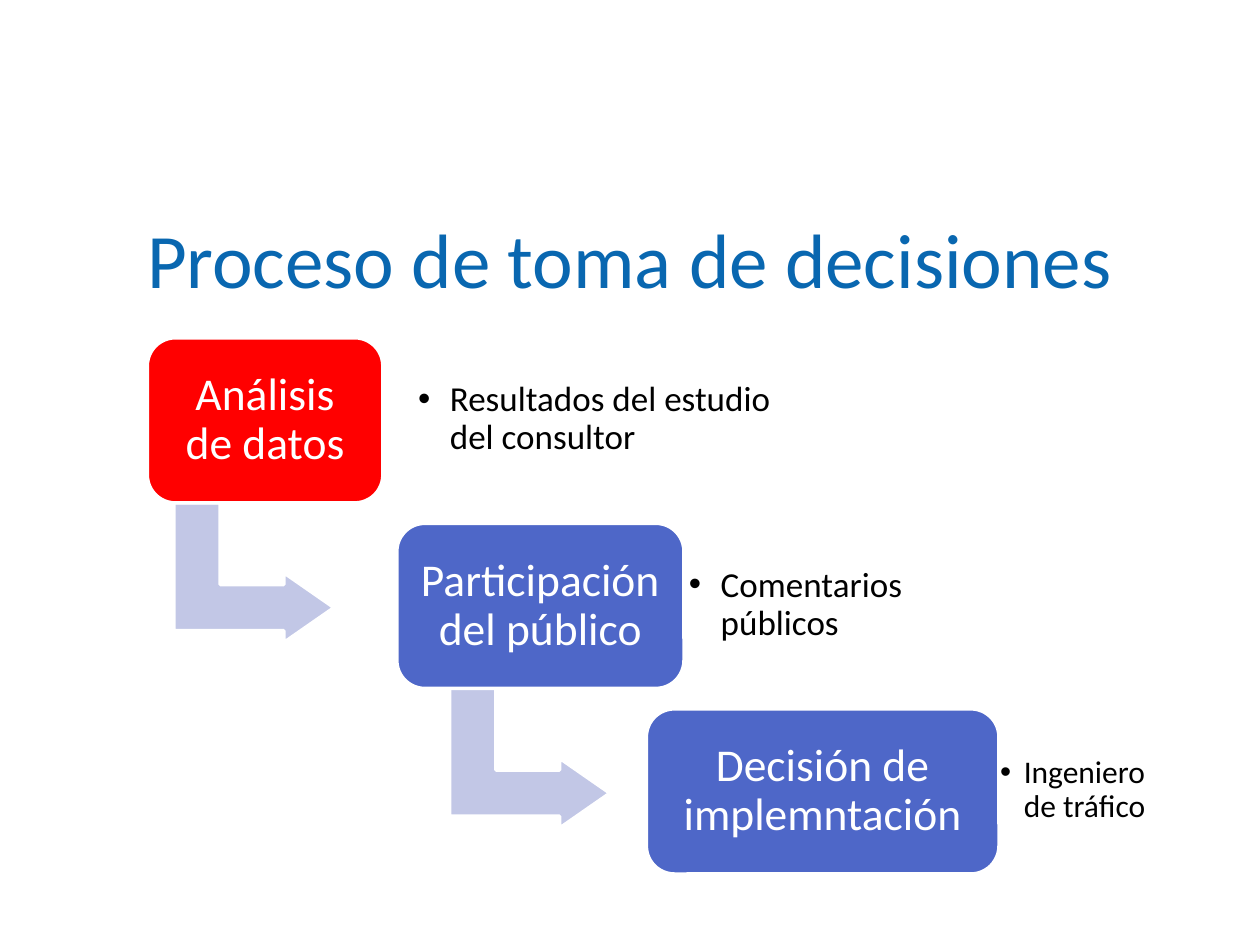
from lxml import etree
from pptx import Presentation
from pptx.dml.color import RGBColor
from pptx.enum import shapes, text
from pptx.oxml.ns import qn
from pptx.util import Cm, Pt

FONT = "Calibri"
COLORS = {
    "title": "0967B0",
    "current": "FF0000",
    "step": "4E67C8",
    "arrow": "C2C7E6",
    "white": "FFFFFF",
    "black": "000000",
}

# Staircase of steps, in cm
FIRST_LEFT, FIRST_TOP = 2.97, 6.81
STEP_RIGHT, STEP_DOWN = 5.03, 3.74
BOX_HEIGHT = 3.33
INSET = 0.28

# label, box colour, box width, note, note left, note width, size, indent, arrow left
STEPS = [
    ("Análisis de datos", "current", 4.75,
     "Resultados del estudio del consultor", 8.15, 8.0, 20, 0.64, 3.71),
    ("Participación del público", "step", 5.79,
     "Comentarios públicos", 13.61, 6.17, 20, 0.64, 9.27),
    ("Decisión de implemntación", "step", 7.11,
     "Ingeniero de tráfico", 19.91, 3.45, 18, 0.48, None),
]


def rgb(name):
    return RGBColor.from_string(COLORS[name])


def set_font(para, size, color):
    para.font.name = FONT
    para.font.size = Pt(size)
    para.font.color.rgb = rgb(color)


def fill_frame(frame, words, size, color, align, inset=INSET):
    frame.word_wrap = True
    frame.vertical_anchor = text.MSO_ANCHOR.MIDDLE
    frame.margin_left = frame.margin_right = Cm(inset)
    frame.margin_top = frame.margin_bottom = Cm(inset)
    para = frame.paragraphs[0]
    para.text = words
    para.alignment = align
    para.line_spacing = 0.9
    set_font(para, size, color)
    return para


def add_block(slide, kind, place, color, adjustments):
    block = slide.shapes.add_shape(kind, *(Cm(value) for value in place))
    block.shadow.inherit = False
    block.fill.solid()
    block.fill.fore_color.rgb = rgb(color)
    block.line.color.rgb = rgb("white")
    block.line.width = Pt(2)
    for index, value in enumerate(adjustments):
        block.adjustments[index] = value
    return block


def add_arrow(slide, left, top):
    arrow = add_block(slide, shapes.MSO_SHAPE.BENT_UP_ARROW,
                      (left, top, 2.82, 3.23), "arrow", (0.33, 0.25, 0.36))
    arrow.rotation = 90


def add_step(slide, label, color, left, top, width):
    box = add_block(slide, shapes.MSO_SHAPE.ROUNDED_RECTANGLE,
                    (left, top, width, BOX_HEIGHT), color, (0.17,))
    fill_frame(box.text_frame, label, 26, "white", text.PP_ALIGN.CENTER)


def add_note(slide, words, left, top, width, size, indent):
    box = slide.shapes.add_textbox(Cm(left), Cm(top), Cm(width), Cm(2.69))
    inset = 0.25 if size < 20 else INSET
    para = box.text_frame.paragraphs[0]
    props = para._p.get_or_add_pPr()
    props.set("marL", str(Cm(indent)))
    props.set("indent", str(-Cm(indent)))
    etree.SubElement(props, qn("a:buFont")).set("typeface", "Arial")
    etree.SubElement(props, qn("a:buChar")).set("char", "•")
    fill_frame(box.text_frame, words, size, "black", text.PP_ALIGN.LEFT, inset)


def add_title(slide, words):
    title = slide.shapes.title
    title.left, title.top = Cm(1.27), Cm(3.61)
    title.width, title.height = Cm(22.86), Cm(3.18)
    title.text_frame.vertical_anchor = text.MSO_ANCHOR.MIDDLE
    para = title.text_frame.paragraphs[0]
    para.text = words
    para.alignment = text.PP_ALIGN.CENTER
    set_font(para, 44, "title")


def main():
    deck = Presentation()
    deck.slide_width, deck.slide_height = Cm(25.4), Cm(19.05)
    slide = deck.slides.add_slide(deck.slide_layouts[5])
    add_title(slide, "Proceso de toma de decisiones")

    # Each step: arrow to the next one, box, note beside it
    for index, step in enumerate(STEPS):
        label, color, width, note, note_left, note_width, size, indent, arrow_left = step
        left = FIRST_LEFT + index * STEP_RIGHT
        top = FIRST_TOP + index * STEP_DOWN
        if arrow_left is not None:
            add_arrow(slide, arrow_left, top + 3.12)
        add_step(slide, label, color, left, top, width)
        add_note(slide, note, note_left, top + 0.3, note_width, size, indent)

    deck.save("out.pptx")


if __name__ == "__main__":
    main()
